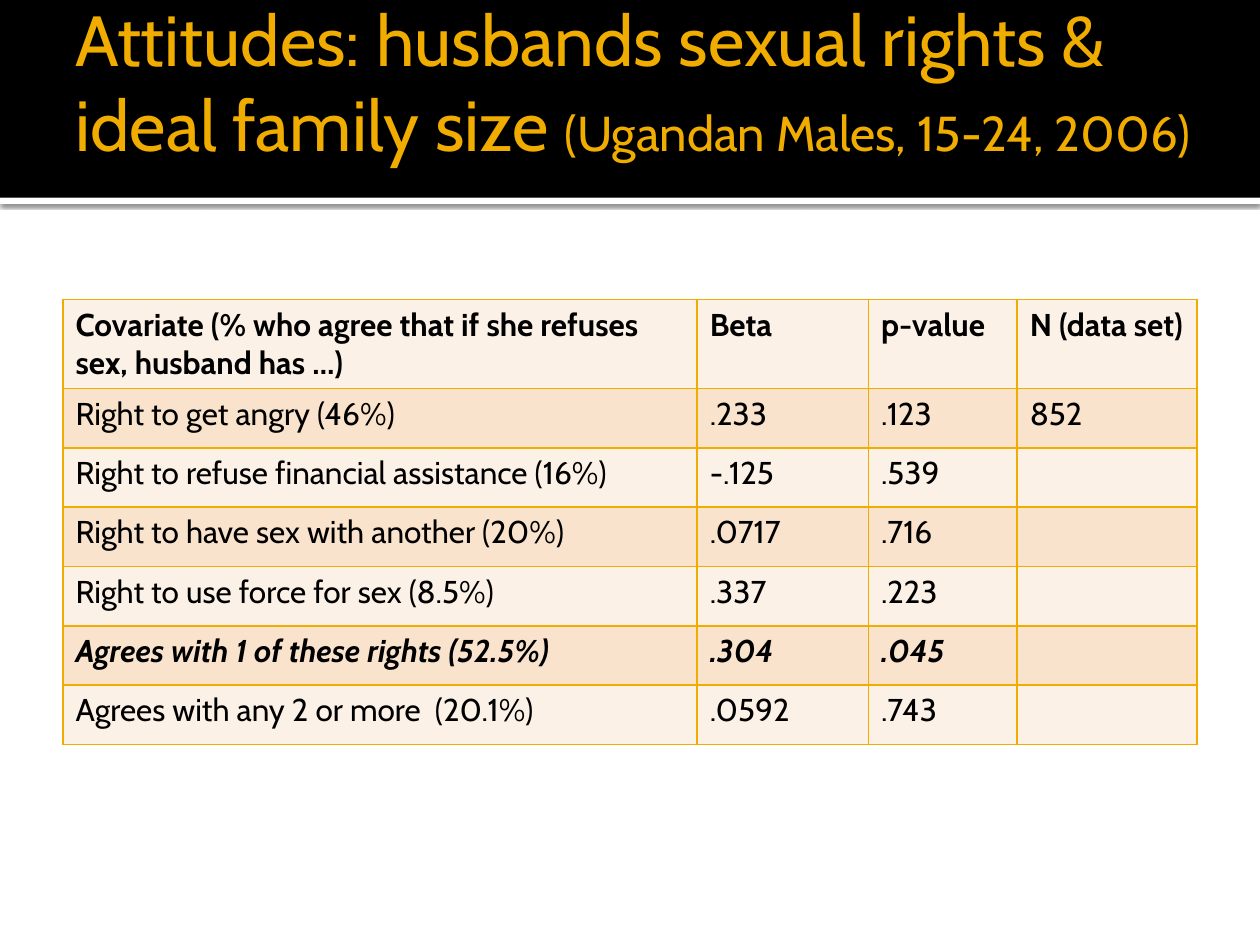
"""Build the slide on husbands' sexual rights and ideal family size."""
import dataclasses

import lxml.etree
import pptx
import pptx.dml.color
import pptx.enum.shapes
import pptx.enum.text
import pptx.oxml
import pptx.oxml.ns
import pptx.util

Pt = pptx.util.Pt
qn = pptx.oxml.ns.qn
FONT = "Cabin"
COLORS = {"black": "000000", "white": "FFFFFF", "gold": "F0AD00",
          "pale": "FCF1E7", "peach": "F9E3CC"}
WIDTHS = (362.4, 97.9, 85, 102.7)
HEAD = 50.9
HEIGHT = 33.9


@dataclasses.dataclass
class Row:
    """One table row with its emphasis."""
    cells: tuple[str, ...]
    bold: bool = False
    italic: bool = False


@dataclasses.dataclass
class Band:
    """One full-width bar of the header."""
    top: float
    height: float
    color: str
    shadow: bool = False


BANDS = (Band(113, 3.6, "white", True), Band(0, 113, "black"))
ROWS = (
    Row(("Covariate (% who agree that if she refuses sex, husband has …)",
         "Beta", "p-value", "N (data set)"), bold=True),
    Row(("Right to get angry (46%)", ".233", ".123", "852")),
    Row(("Right to refuse financial assistance (16%)", "-.125", ".539", "")),
    Row(("Right to have sex with another (20%)", ".0717", ".716", "")),
    Row(("Right to use force for sex (8.5%)", ".337", ".223", "")),
    Row(("Agrees with 1 of these rights (52.5%)", ".304", ".045", ""),
        bold=True, italic=True),
    Row(("Agrees with any 2 or more  (20.1%)", ".0592", ".743", "")),
)


def rgb(name: str) -> pptx.dml.color.RGBColor:
    """Look up a named colour."""
    return pptx.dml.color.RGBColor.from_string(COLORS[name])


def add_child(parent, tag: str, **attrs: str):
    """Append a drawing element and return it."""
    return lxml.etree.SubElement(parent, qn(tag), attrs)


def draw_band(slide, band: Band) -> None:
    """Draw a bar across the slide."""
    shape = slide.shapes.add_shape(
        pptx.enum.shapes.MSO_SHAPE.RECTANGLE,
        Pt(0), Pt(band.top), Pt(720), Pt(band.height))
    shape.shadow.inherit = False
    shape.fill.solid()
    shape.fill.fore_color.rgb = rgb(band.color)
    shape.line.fill.background()
    if band.shadow:
        effects = shape._element.spPr.find(qn("a:effectLst"))
        shade = add_child(effects, "a:outerShdw", blurRad=str(Pt(2.5)),
                          dist=str(Pt(0.8)), dir="5400000", rotWithShape="0")
        color = add_child(shade, "a:srgbClr", val=COLORS["black"])
        add_child(color, "a:alpha", val="60000")


def draw_title(slide) -> None:
    """Write the two-size title."""
    frame = slide.shapes.add_textbox(Pt(36), Pt(12.2), Pt(648), Pt(98.6)).text_frame
    frame.word_wrap = True
    frame.vertical_anchor = pptx.enum.text.MSO_ANCHOR.MIDDLE
    frame.margin_left = Pt(7.2)
    frame.margin_right = frame.margin_top = Pt(3.6)
    frame.margin_bottom = Pt(34)
    line = frame.paragraphs[0]
    line.font.name = FONT
    line.font.color.rgb = rgb("gold")
    for text, size in (
            ("Attitudes: husbands sexual rights & ideal family size ", 40.5),
            ("(Ugandan Males, 15-24, 2006)", 28)):
        run = line.add_run()
        run.text = text
        run.font.size = Pt(size)


def fill_cell(cell, text: str, row: Row, color: str) -> None:
    """Write, border and fill one table cell."""
    cell.text = text
    font = cell.text_frame.paragraphs[0].font
    font.name, font.size = FONT, Pt(18)
    font.bold, font.italic = row.bold, row.italic
    font.color.rgb = rgb("black")
    props = cell._tc.get_or_add_tcPr()
    for side in ("L", "R", "T", "B"):
        edge = add_child(props, f"a:ln{side}", w=str(Pt(1)))
        fill = add_child(edge, "a:solidFill")
        add_child(fill, "a:srgbClr", val=COLORS["gold"])
    cell.fill.solid()
    cell.fill.fore_color.rgb = rgb(color)


def draw_table(slide) -> None:
    """Draw the table of covariates."""
    table = slide.shapes.add_table(
        len(ROWS), len(WIDTHS), Pt(36), Pt(171.2), Pt(sum(WIDTHS)),
        Pt(HEAD + HEIGHT * (len(ROWS) - 1))).table
    for col, width in zip(table.columns, WIDTHS):
        col.width = Pt(width)
    for num, row in enumerate(ROWS):
        table.rows[num].height = Pt(HEIGHT if num else HEAD)
        for cell, text in zip(table.rows[num].cells, row.cells):
            fill_cell(cell, text, row, "peach" if num % 2 else "pale")


def main() -> None:
    """Build and save the slide."""
    deck = pptx.Presentation()
    deck.slide_width, deck.slide_height = Pt(720), Pt(540)
    slide = deck.slides.add_slide(deck.slide_layouts[6])
    for band in BANDS:
        draw_band(slide, band)
    draw_title(slide)
    draw_table(slide)
    deck.save("out.pptx")


if __name__ == "__main__":
    main()
